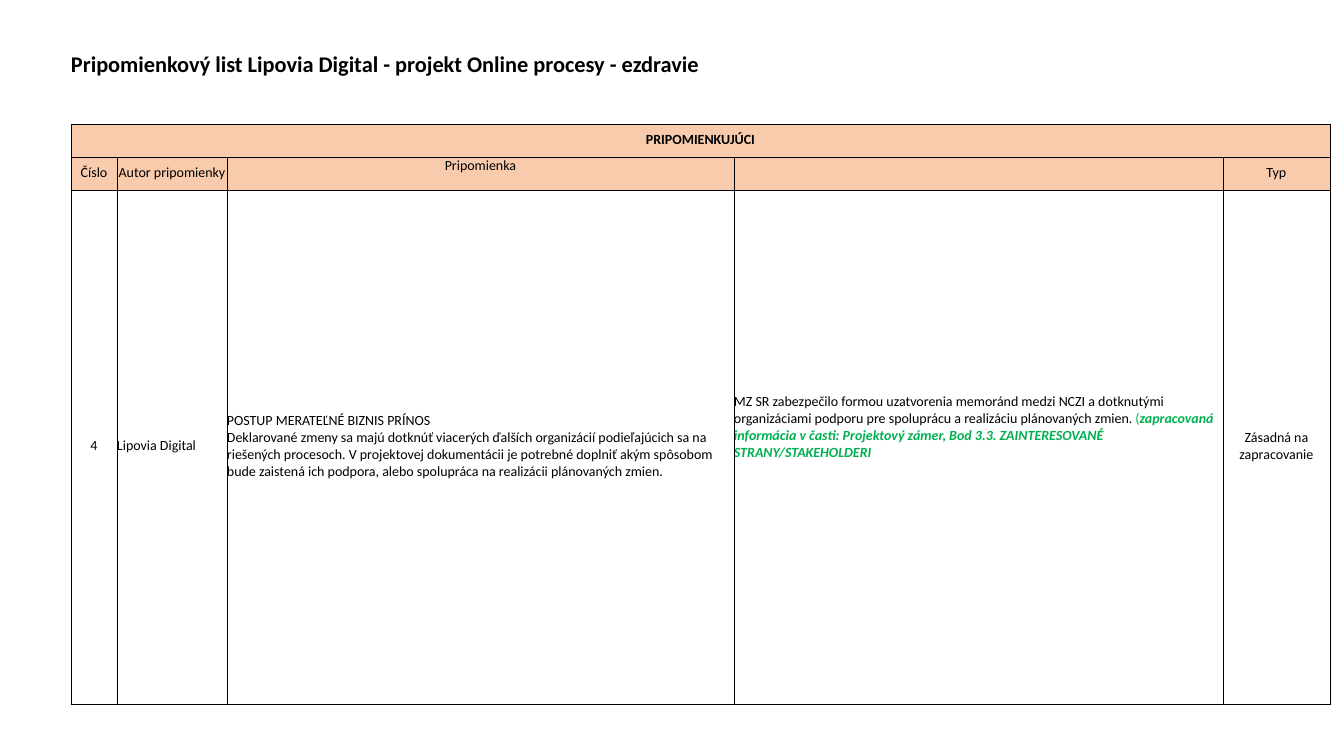
"""Build a slide with a table of review comments on an e-health project."""
from lxml import etree
from pptx import Presentation
from pptx.dml.color import RGBColor
from pptx.enum import text
from pptx.oxml import ns
from pptx.util import Emu, Pt

BLACK = RGBColor(0x00, 0x00, 0x00)
WHITE = RGBColor(0xFF, 0xFF, 0xFF)
PEACH = RGBColor(0xF8, 0xCB, 0xAD)
GREEN = RGBColor(0x00, 0xB0, 0x50)

LEFT, CENTER = text.PP_ALIGN.LEFT, text.PP_ALIGN.CENTER
TOP, MIDDLE = text.MSO_ANCHOR.TOP, text.MSO_ANCHOR.MIDDLE
BREAK = "\n"

PLAIN = {"size": Pt(10), "name": "Calibri", "bold": False, "italic": False}
BOLD = {**PLAIN, "bold": True}
TITLE = {**BOLD, "size": Pt(16)}
NOTE = {**BOLD, "italic": True}

COLUMNS = [46, 31, 79, 87, 420, 193, 163, 133, 107, 5]
HEIGHTS = [30, 43, 33, 33, 514]
ORIGIN = (71, 51)
BOTTOM_INSET = 3
RAISED_INSET = 40

EMPTY = {}
HEADER = {"align": CENTER, "fill": PEACH, "borders": "LRTB"}
ENTRY = {"borders": "LRTB"}
BLANK = {"fill": WHITE, "borders": "B"}
EDGE = {"borders": "L"}


def plain(words, look=PLAIN):
    """Return one black span in the given look."""
    return [(words, look, BLACK)]


ROWS = [
    [(10, {"fill": WHITE}, plain(
        "Pripomienkový list Lipovia Digital - projekt Online procesy - ezdravie", TITLE))],
    [(2, BLANK, []), (2, BLANK, []), (2, BLANK, []), (1, BLANK, []), (2, BLANK, []),
     (1, {"fill": WHITE}, [])],
    [(9, HEADER, plain("PRIPOMIENKUJÚCI", BOLD)), (1, {**EDGE, "fill": WHITE}, [])],
    [(1, HEADER, plain("Číslo")),
     (2, HEADER, plain("Autor pripomienky")),
     (2, {**HEADER, "anchor": TOP}, plain("Pripomienka")),
     (3, HEADER, []),
     (1, HEADER, plain("Typ")),
     (1, EDGE, [])],
    [(1, {**ENTRY, "align": CENTER}, plain("4")),
     (2, ENTRY, plain("Lipovia Digital")),
     (2, ENTRY, plain("POSTUP MERATEĽNÉ BIZNIS PRÍNOS") + plain(BREAK) + plain(
         "Deklarované zmeny sa majú dotknúť viacerých ďalších organizácií podieľajúcich sa "
         "na riešených procesoch. V projektovej dokumentácii je potrebné doplniť akým "
         "spôsobom bude zaistená ich podpora, alebo spolupráca na realizácii plánovaných "
         "zmien.")),
     (3, {**ENTRY, "bottom": RAISED_INSET}, [
         ("MZ SR zabezpečilo formou uzatvorenia memoránd medzi NCZI a dotknutými "
          "organizáciami podporu pre spoluprácu a realizáciu plánovaných zmien. ",
          PLAIN, BLACK),
         ("(", PLAIN, GREEN),
         ("zapracovaná informácia v časti: Projektový zámer, Bod 3.3. ZAINTERESOVANÉ "
          "STRANY/STAKEHOLDERI", NOTE, GREEN)]),
     (1, {**ENTRY, "align": CENTER}, plain("Zásadná na zapracovanie")),
     (1, EDGE, [])],
]


def px(length):
    """Convert pixels to EMU."""
    return Emu(round(length * 914400 / 100.8))


def set_borders(cell, sides):
    """Draw the named sides of a cell and clear the others."""
    props = cell._tc.get_or_add_tcPr()
    for side in "LRTB":
        line = etree.SubElement(props, ns.qn("a:ln" + side), w=str(Pt(0.5)))
        if side in sides:
            fill = etree.SubElement(line, ns.qn("a:solidFill"))
            etree.SubElement(fill, ns.qn("a:srgbClr"), val=str(BLACK))
        else:
            etree.SubElement(line, ns.qn("a:noFill"))


def set_fill(cell, color):
    """Fill a cell, or leave it clear when there is no colour."""
    if color is None:
        cell.fill.background()
    else:
        cell.fill.solid()
        cell.fill.fore_color.rgb = color


def write(cell, style, spans):
    """Write formatted spans into a cell."""
    layout = {"margin_left": 0, "margin_top": 0, "margin_right": 0,
              "margin_bottom": px(style.get("bottom", BOTTOM_INSET)),
              "vertical_anchor": style.get("anchor", MIDDLE)}
    for name, value in layout.items():
        setattr(cell, name, value)
    para = cell.text_frame.paragraphs[0]
    para.alignment = style.get("align", LEFT)
    para.font.size = Pt(10)
    for words, look, color in spans:
        if words == BREAK:
            para.add_line_break()
            continue
        span = para.add_run()
        span.text = words
        for name, value in look.items():
            setattr(span.font, name, value)
        span.font.color.rgb = color


def add_region(table, row, start, width, style, spans):
    """Format one run of columns as a single cell."""
    end = start + width - 1
    for column in range(start, end + 1):
        cell = table.cell(row, column)
        hidden = ("L" if column > start else "") + ("R" if column < end else "")
        set_borders(cell, set(style.get("borders", "")) - set(hidden))
        set_fill(cell, style.get("fill"))
        write(cell, style, spans if column == start else [])
    if width > 1:
        table.cell(row, start).merge(table.cell(row, end))


def main():
    """Create the deck and save it."""
    deck = Presentation()
    deck.slide_width, deck.slide_height = px(1344), px(756)
    page = deck.slides.add_slide(deck.slide_layouts[6])
    frame = page.shapes.add_table(len(HEIGHTS), len(COLUMNS), *map(px, ORIGIN),
                                  px(sum(COLUMNS)), px(sum(HEIGHTS)))
    table = frame.table
    table.first_row = table.horz_banding = False
    for column, width in zip(table.columns, COLUMNS):
        column.width = px(width)
    for index, (height, regions) in enumerate(zip(HEIGHTS, ROWS)):
        table.rows[index].height = px(height)
        start = 0
        for width, style, spans in regions:
            add_region(table, index, start, width, style, spans)
            start += width
    deck.save("out.pptx")


if __name__ == "__main__":
    main()
